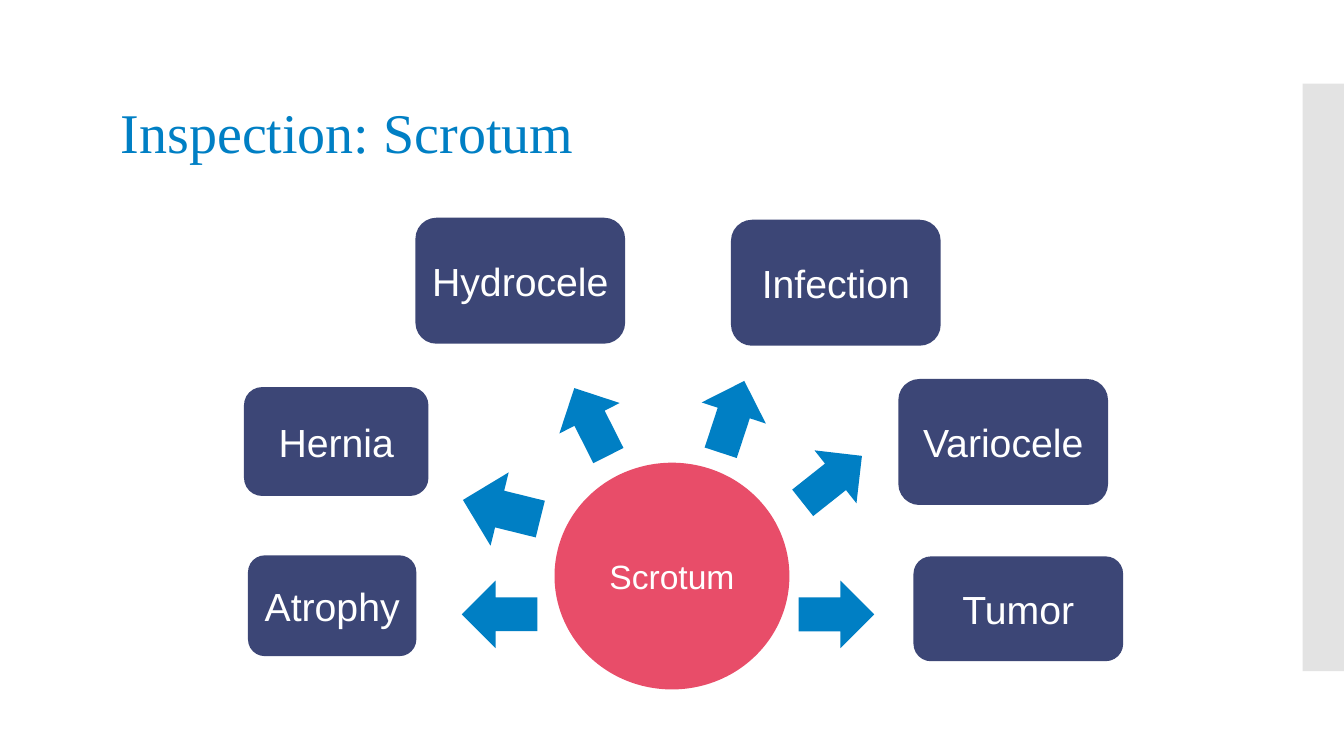
from pptx import Presentation
from pptx.dml.color import RGBColor
from pptx.enum.shapes import MSO_SHAPE as Kind
from pptx.enum.text import MSO_ANCHOR as Anchor, PP_ALIGN as Align
from pptx.oxml.ns import qn
from pptx.util import Inches, Pt
from lxml import etree

BLUE = RGBColor(0x00, 0x7F, 0xC4)
NAVY = RGBColor(0x3C, 0x46, 0x76)
PINK = RGBColor(0xE8, 0x4D, 0x69)
GREY = RGBColor(0xC8, 0xC8, 0xC8)
WHITE = RGBColor(0xFF, 0xFF, 0xFF)

deck = Presentation()
deck.slide_width, deck.slide_height = Inches(13.33), Inches(7.5)
slide = deck.slides.add_slide(deck.slide_layouts[5])


def draw(kind, box, color, turn=0):
    shape = slide.shapes.add_shape(kind, *[Inches(n) for n in box])
    shape.shadow.inherit = False
    shape.fill.solid()
    shape.fill.fore_color.rgb = color
    shape.line.fill.background()
    shape.rotation = turn
    return shape


def label(shape, text, size):
    frame = shape.text_frame
    frame.word_wrap = True
    frame.vertical_anchor = Anchor.MIDDLE
    frame.margin_left = frame.margin_right = Inches(0.05)
    para = frame.paragraphs[0]
    para.text = text
    para.alignment = Align.CENTER
    para.font.name, para.font.size = "Arial", Pt(size)
    para.font.color.rgb = WHITE


# Half-transparent side bar
bar = draw(Kind.RECTANGLE, (12.92, 0.83, 0.41, 5.83), GREY)
tint = bar.fill._xPr.find(qn("a:solidFill"))[0]
etree.SubElement(tint, qn("a:alpha")).set("val", "50000")

# Title
title = slide.shapes.title
title.left, title.top = Inches(1.1), Inches(0.99)
title.width, title.height = Inches(7.37), Inches(1.01)
frame = title.text_frame
frame.vertical_anchor = Anchor.TOP
frame.word_wrap = True
para = frame.paragraphs[0]
para.text = "Inspection: Scrotum"
para.alignment = Align.LEFT
para.line_spacing = 0.9
para.font.name, para.font.size = "Times New Roman", Pt(40)
para.font.color.rgb = BLUE

# Hub
label(draw(Kind.OVAL, (5.5, 4.59, 2.33, 2.25), PINK), "Scrotum", 24)

# Findings around the hub: text, box, arrow box, arrow angle
finds = [
    ("Atrophy", (2.46, 5.51, 1.67, 1), (4.58, 5.76, 0.75, 0.67), 0),
    ("Hernia", (2.42, 3.84, 1.83, 1.08), (4.58, 4.68, 0.79, 0.75), 13.9),
    ("Hydrocele", (4.12, 2.16, 2.08, 1.25), (5.49, 3.85, 0.75, 0.67), 63.2),
    ("Infection", (7.25, 2.18, 2.08, 1.25), (6.89, 3.8, 0.75, 0.67), 108.2),
    ("Variocele", (8.91, 3.76, 2.08, 1.25), (7.88, 4.42, 0.75, 0.67), 141.6),
    ("Tumor", (9.06, 5.52, 2.08, 1.04), (7.92, 5.76, 0.75, 0.67), 180),
]
for text, box, arrow, turn in finds:
    draw(Kind.LEFT_ARROW, arrow, BLUE, turn)
    label(draw(Kind.ROUNDED_RECTANGLE, box, NAVY), text, 28)

deck.save("out.pptx")
